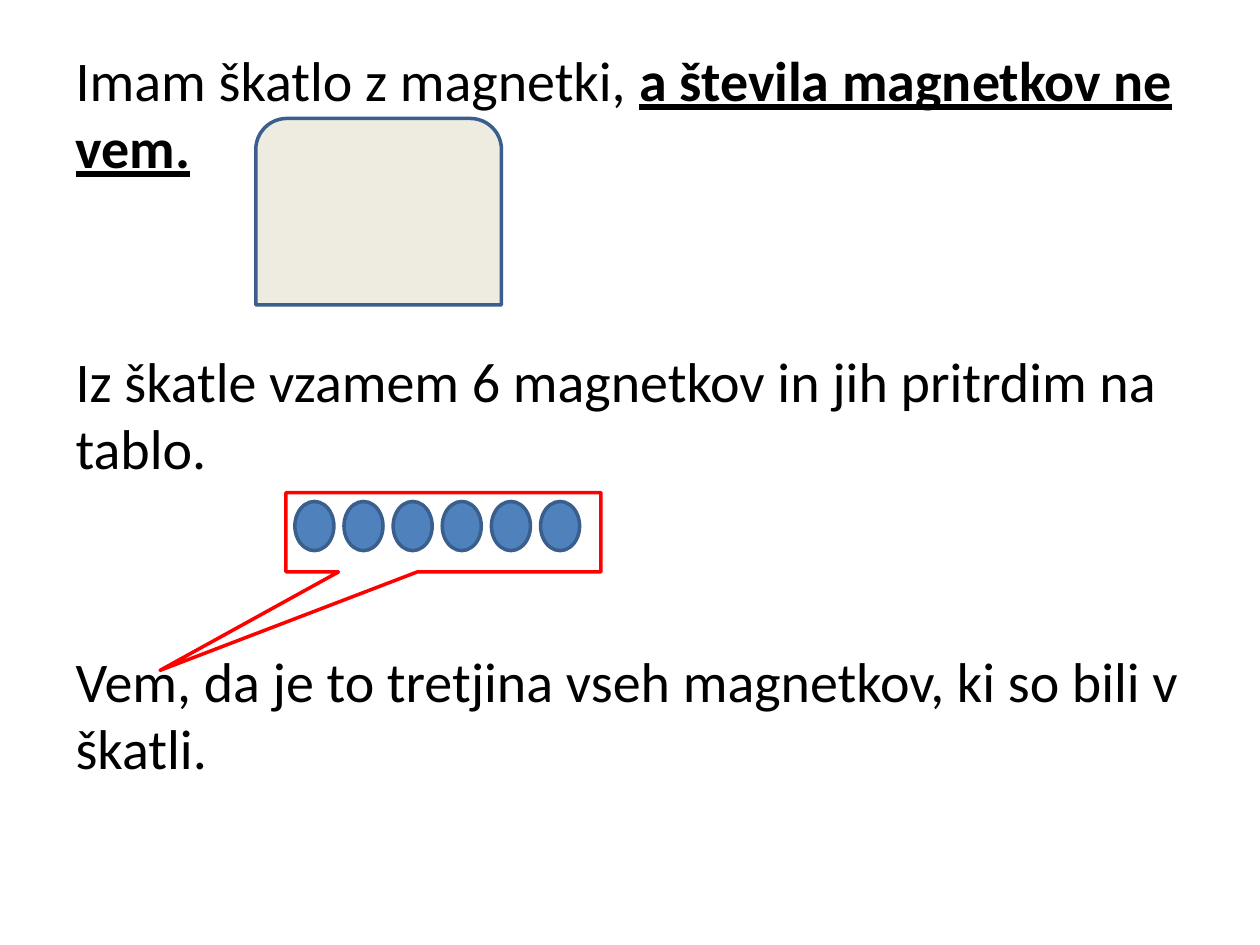
from pptx import Presentation
from pptx.dml.color import RGBColor
from pptx.enum.shapes import MSO_SHAPE
from pptx.oxml.ns import qn
from pptx.util import Inches, Pt


def paint(target, color):
    target.solid()
    target.fore_color.rgb = RGBColor.from_string(color)


def draw(page, kind, left, top, width, height, fill, line):
    shape = page.shapes.add_shape(
        kind, *(Inches(length) for length in (left, top, width, height)))
    shape.shadow.inherit = False
    if fill:
        paint(shape.fill, fill)
    else:
        shape.fill.background()
    paint(shape.line.fill, line)
    shape.line.width = Pt(2)
    return shape


deck = Presentation()
deck.slide_width, deck.slide_height = Inches(10), Inches(7.5)
page = deck.slides.add_slide(deck.slide_layouts[1])
title = page.shapes.title.element
title.getparent().remove(title)

body = page.placeholders[1]
frame = {"left": 0.5, "top": 0.31, "width": 9, "height": 6.39}
for name, length in frame.items():
    setattr(body, name, Inches(length))

plain = {"name": "Calibri", "size": Pt(32), "bold": False, "underline": False}
strong = {**plain, "bold": True, "underline": True}
story = [
    [("Imam škatlo z magnetki, ", plain), ("a števila magnetkov ne vem.", strong)],
    [("Iz škatle vzamem 6 magnetkov in jih pritrdim na tablo.", plain)],
    [("Vem, da je to tretjina vseh magnetkov, ki so bili v škatli.", plain)],
]
for index, sentence in enumerate(story):
    para = body.text_frame.add_paragraph() if index else body.text_frame.paragraphs[0]
    if index:
        para.space_before = Pt(95)
    properties = para._p.get_or_add_pPr()
    properties.set("marL", "0")
    properties.set("indent", "0")
    properties.append(properties.makeelement(qn("a:buNone"), {}))
    for text, style in sentence:
        span = para.add_run()
        span.text = text
        for name, value in style.items():
            setattr(span.font, name, value)
        paint(span.font.fill, "000000")

draw(page, MSO_SHAPE.ROUND_2_SAME_RECTANGLE, 2.03, 0.94, 1.95, 1.48, "EEECE1", "3A5F8C")

magnet_left, magnet_step = 2.34, 0.39
for column in range(6):
    draw(page, MSO_SHAPE.FLOWCHART_CONNECTOR, magnet_left + column * magnet_step,
         3.98, 0.31, 0.39, "4F81BD", "3A5F8C")

callout = draw(page, MSO_SHAPE.RECTANGULAR_CALLOUT, 2.27, 3.91, 2.5, 0.63, None, "FF0000")
callout.adjustments[0] = -0.9
callout.adjustments[1] = 1.74

deck.save("out.pptx")
